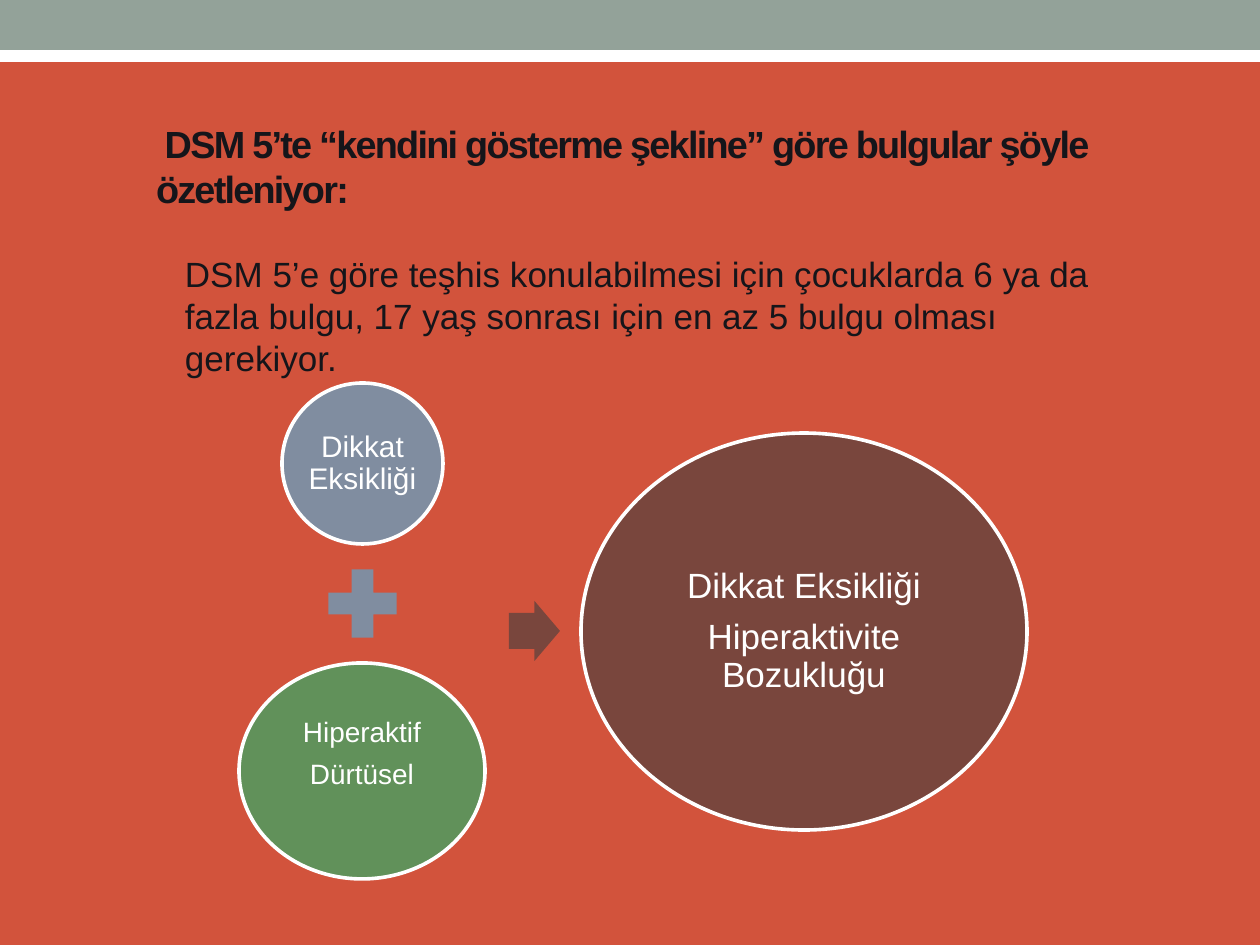
from pptx import Presentation
from pptx.dml.color import RGBColor
from pptx.enum.shapes import MSO_SHAPE
from pptx.enum.text import MSO_ANCHOR, PP_ALIGN
from pptx.util import Emu, Pt

SCALE = 914400 / 126  # EMU in one px
FONT = "Arial"

RECT, OVAL = MSO_SHAPE.RECTANGLE, MSO_SHAPE.OVAL
PLUS, ARROW = MSO_SHAPE.MATH_PLUS, MSO_SHAPE.RIGHT_ARROW
TOP, MIDDLE = MSO_ANCHOR.TOP, MSO_ANCHOR.MIDDLE
LEFT, CENTER = PP_ALIGN.LEFT, PP_ALIGN.CENTER

WHITE = RGBColor(0xFF, 0xFF, 0xFF)
INK = RGBColor(0x15, 0x15, 0x1A)
RED = RGBColor(0xD2, 0x53, 0x3C)
SAGE = RGBColor(0x93, 0xA2, 0x99)
SLATE = RGBColor(0x80, 0x8D, 0xA0)
GREEN = RGBColor(0x61, 0x91, 0x5A)
BROWN = RGBColor(0x79, 0x46, 0x3D)


def px(n):
    return Emu(round(n * SCALE))


class Deck:
    def __init__(self, wide, high):
        self.prs = Presentation()
        self.prs.slide_width, self.prs.slide_height = px(wide), px(high)

    def add_slide(self, color):
        self.slide = self.prs.slides.add_slide(self.prs.slide_layouts[6])
        fill = self.slide.background.fill
        fill.solid()
        fill.fore_color.rgb = color

    def set_text(self, frame, lines, size, color, align, anchor,
                 space, after=0, bold=False, track=0):
        frame.word_wrap = True
        frame.vertical_anchor = anchor
        frame.margin_left = frame.margin_right = 0
        frame.margin_top = frame.margin_bottom = 0
        frame.text = "\n".join(lines)
        for para in frame.paragraphs:
            para.alignment = align
            para.line_spacing = space
            para.space_after = Pt(after)
            for run in para.runs:
                font = run.font
                font.name, font.size, font.bold = FONT, Pt(size), bold
                font.color.rgb = color
                if track:
                    run._r.get_or_add_rPr().set("spc", str(track))

    def text(self, box, line, size, pitch, **style):
        item = self.slide.shapes.add_textbox(*map(px, box))
        self.set_text(item.text_frame, [line], size, INK, LEFT, TOP,
                      Pt(pitch), **style)

    def shape(self, kind, box, color):
        item = self.slide.shapes.add_shape(kind, *map(px, box))
        item.shadow.inherit = False
        item.fill.solid()
        item.fill.fore_color.rgb = color
        item.line.fill.background()
        return item

    def circle(self, box, color, lines, size, lift=0):
        item = self.shape(OVAL, box, color)
        item.line.color.rgb = WHITE
        item.line.width = Pt(2.08)
        self.set_text(item.text_frame, lines, size, WHITE, CENTER, MIDDLE,
                      0.9, after=0.4 * size)
        item.text_frame.margin_bottom = px(lift)


def main():
    deck = Deck(1260, 945)
    deck.add_slide(RED)

    # Top bands
    deck.shape(RECT, (0, 30, 1260, 32), WHITE)
    deck.shape(RECT, (0, 0, 1260, 50), SAGE)

    # Title and body
    deck.text((156, 121, 987, 92),
              " DSM 5’te “kendini gösterme şekline” göre bulgular şöyle "
              "özetleniyor:", 21.6, 25.7, bold=True, track=-100)
    deck.text((185, 252, 958, 126),
              "DSM 5’e göre teşhis konulabilmesi için çocuklarda 6 ya da "
              "fazla bulgu, 17 yaş sonrası için en az 5 bulgu olması "
              "gerekiyor.", 20, 24)

    # Two findings that add up
    deck.circle((282, 383, 161, 161), SLATE, ["Dikkat Eksikliği"], 17)
    deck.shape(PLUS, (316, 557, 93, 93), SLATE)
    deck.circle((239, 663, 246, 216), GREEN, ["Hiperaktif", "Dürtüsel"],
                16, lift=33)

    # Resulting disorder
    arrow = deck.shape(ARROW, (509, 601, 51, 60), BROWN)
    arrow.adjustments[0] = 0.6
    deck.circle((581, 433, 446, 397), BROWN,
                ["Dikkat Eksikliği", "Hiperaktivite Bozukluğu"], 20)

    deck.prs.save("out.pptx")


if __name__ == "__main__":
    main()
